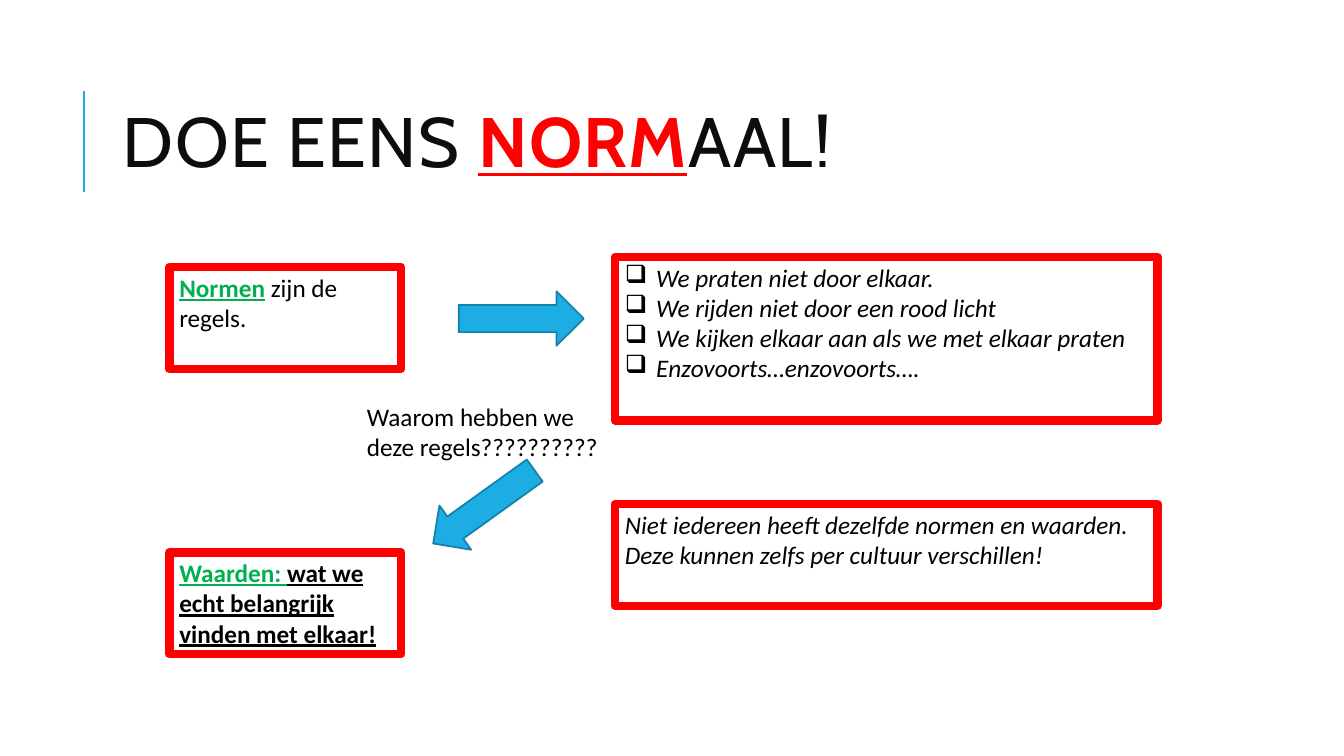
from dataclasses import dataclass

from lxml.etree import SubElement
from pptx import Presentation
from pptx.dml.color import RGBColor
from pptx.enum.shapes import MSO_CONNECTOR, MSO_SHAPE
from pptx.enum.text import MSO_ANCHOR
from pptx.oxml.ns import qn
from pptx.util import Inches, Pt


@dataclass(frozen=True)
class Theme:
    title_font: str = "Cabin"
    body_font: str = "Calibri"
    title_size: int = 50
    body_size: int = 18
    title_color: str = "0D0D0D"
    text_color: str = "000000"
    red: str = "FF0000"
    green: str = "00B050"
    blue: str = "1CADE4"
    dark_blue: str = "1580A9"


def rgb(color):
    return RGBColor.from_string(color)


class SlideBuilder:
    def __init__(self, page, theme):
        self.page = page
        self.theme = theme

    def text_box(self, left, top, width, height):
        box = self.page.shapes.add_textbox(
            Inches(left), Inches(top), Inches(width), Inches(height))
        box.text_frame.word_wrap = True
        return box

    def add_span(self, para, text, color, emphasis=False):
        """Append a run; emphasis makes it bold and underlined."""
        span = para.add_run()
        span.text = text
        span.font.color.rgb = rgb(color)
        if emphasis:
            span.font.bold = True
            span.font.underline = True
        return span

    def title(self, left, top, width, height, spans):
        frame = self.text_box(left, top, width, height).text_frame
        frame.vertical_anchor = MSO_ANCHOR.MIDDLE
        para = frame.paragraphs[0]
        para.line_spacing = 0.8
        para.font.name = self.theme.title_font
        para.font.size = Pt(self.theme.title_size)
        for text, color, emphasis in spans:
            span = self.add_span(para, text, color, emphasis)
            span.font._element.set("spc", "100")

    def note(self, left, top, width, height, paragraphs,
             framed=True, italic=False, bullet=None):
        """Place body text; each paragraph is a list of (text, color, emphasis)."""
        box = self.text_box(left, top, width, height)
        if framed:
            box.line.color.rgb = rgb(self.theme.red)
            box.line.width = Pt(6)
        frame = box.text_frame
        for index, spans in enumerate(paragraphs):
            para = frame.add_paragraph() if index else frame.paragraphs[0]
            if bullet:
                self.add_bullet(para, bullet)
            para.font.name = self.theme.body_font
            para.font.size = Pt(self.theme.body_size)
            para.font.italic = italic
            for span in spans:
                self.add_span(para, *span)

    def add_bullet(self, para, symbol):
        properties = para._p.get_or_add_pPr()
        indent = Inches(0.31)
        properties.set("marL", str(indent))
        properties.set("indent", str(-indent))
        SubElement(properties, qn("a:buChar")).set("char", symbol)

    def arrow(self, left, top, rotation=0):
        arrow = self.page.shapes.add_shape(
            MSO_SHAPE.RIGHT_ARROW,
            Inches(left), Inches(top), Inches(1.24), Inches(0.54))
        arrow.shadow.inherit = False
        arrow.rotation = rotation
        arrow.fill.solid()
        arrow.fill.fore_color.rgb = rgb(self.theme.blue)
        arrow.line.color.rgb = rgb(self.theme.dark_blue)
        arrow.line.width = Pt(1.25)

    def rule(self, x, top, bottom):
        line = self.page.shapes.add_connector(
            MSO_CONNECTOR.STRAIGHT,
            Inches(x), Inches(bottom), Inches(x), Inches(top))
        line.line.color.rgb = rgb(self.theme.blue)
        line.line.width = Pt(1.5)
        SubElement(line._element.spPr, qn("a:effectLst"))


def main():
    deck = Presentation()
    deck.slide_width = Inches(13.33)
    deck.slide_height = Inches(7.5)
    theme = Theme()
    slide = SlideBuilder(deck.slides.add_slide(deck.slide_layouts[6]), theme)
    black, green = theme.text_color, theme.green
    left_column, left_width = 1.68, 2.3
    right_column, right_width = 6.1, 5.38
    box_height = 1.01

    slide.rule(0.83, 0.9, 1.9)
    slide.title(1.12, 0.64, 10.63, 1.64, [
        ("DOE EENS ", theme.title_color, False),
        ("NORM", theme.red, True),
        ("AAL!", theme.title_color, False),
    ])

    slide.note(left_column, 2.65, left_width, box_height, [
        [("Normen", green, True), (" zijn de regels.", black)],
    ])
    slide.arrow(4.55, 2.89)
    rules = [
        "We praten niet door elkaar.",
        "We rijden niet door een rood licht",
        "We kijken elkaar aan als we met elkaar praten",
        "Enzovoorts…enzovoorts….",
    ]
    slide.note(right_column, 2.55, right_width, 1.62,
               [[(rule, black)] for rule in rules], italic=True, bullet="❑")

    slide.arrow(4.18, 4.76, rotation=144.3)
    slide.note(3.54, 3.93, 2.51, 0.71, [
        [("Waarom hebben we deze regels??????????", black)],
    ], framed=False)
    slide.note(left_column, 5.48, left_width, box_height, [
        [("Waarden: ", green, True),
         ("wat we echt belangrijk vinden met elkaar!", black, True)],
    ])
    slide.note(right_column, 5, right_width, box_height, [
        [("Niet iedereen heeft dezelfde normen en waarden. "
          "Deze kunnen zelfs per cultuur verschillen!", black)],
    ], italic=True)

    deck.save("out.pptx")


if __name__ == "__main__":
    main()
